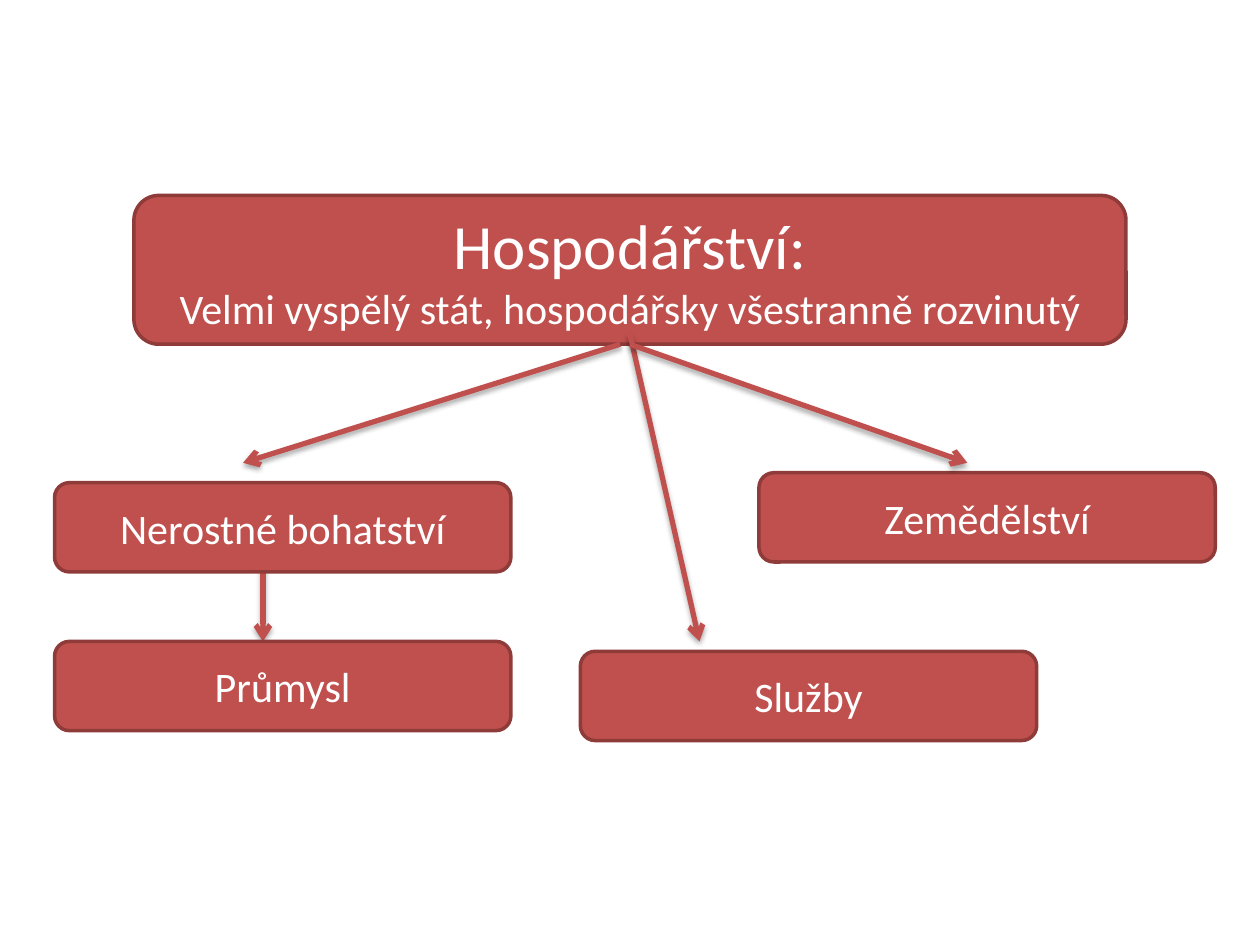
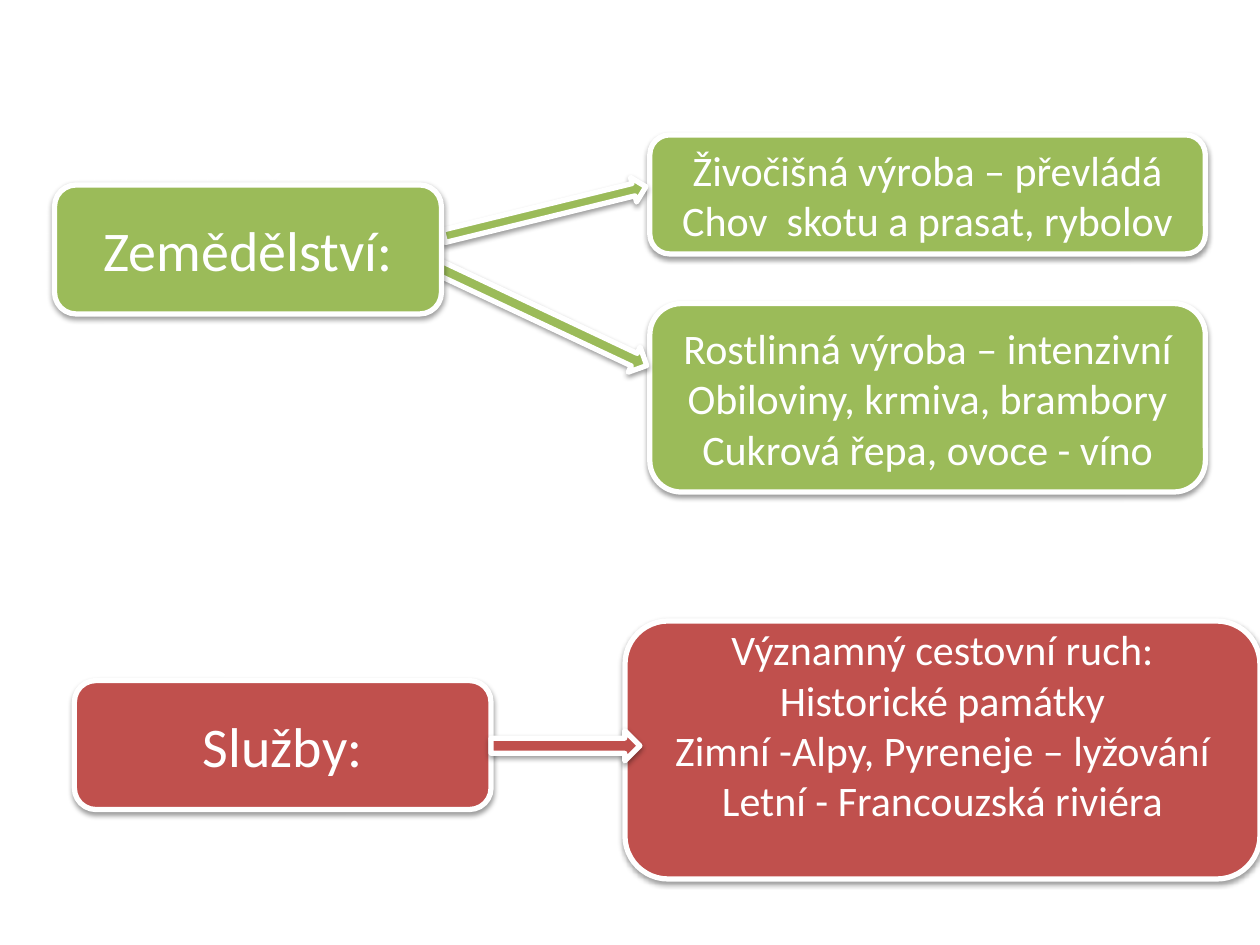
from dataclasses import dataclass

from lxml.etree import SubElement
from pptx import Presentation
from pptx.dml.color import RGBColor as RGB
from pptx.enum.shapes import MSO_CONNECTOR as CONN, MSO_SHAPE as SHAPE
from pptx.enum.text import MSO_ANCHOR as ANCHOR, PP_ALIGN as ALIGN
from pptx.oxml.ns import qn
from pptx.util import Cm, Pt


@dataclass(frozen=True)
class Theme:
    font: str = "Calibri"
    red: RGB = RGB(0xC0, 0x50, 0x4D)
    dark_red: RGB = RGB(0x8E, 0x3B, 0x39)
    green: RGB = RGB(0x9B, 0xBB, 0x59)
    white: RGB = RGB(0xFF, 0xFF, 0xFF)
    title: int = 36
    label: int = 32
    body: int = 24
    thin: int = 2
    thick: int = 3


T = Theme()


def add_shadow(effects, distance, opacity):
    """Put a soft shadow below the shape that owns the effect list."""
    shadow = SubElement(effects, qn("a:outerShdw"), blurRad=str(Pt(3.1)),
                        dist=str(Pt(distance)), dir="5400000", rotWithShape="0")
    color = SubElement(shadow, qn("a:srgbClr"), val="000000")
    SubElement(color, qn("a:alpha"), val=str(opacity * 1000))


def add_block(slide, kind, box, fill, line, width, raised):
    sp = slide.shapes.add_shape(kind, *map(Cm, box))
    sp.fill.solid()
    sp.fill.fore_color.rgb = fill
    sp.line.color.rgb = line
    sp.line.width = Pt(width)
    sp.shadow.inherit = False
    if raised:
        add_shadow(sp.element.spPr.find(qn("a:effectLst")), 1.6, 38)
    return sp


def add_text(sp, lines, sizes):
    tf = sp.text_frame
    tf.word_wrap = True
    tf.vertical_anchor = ANCHOR.MIDDLE
    tf.text = "\n".join(lines)
    for p, size in zip(tf.paragraphs, sizes):
        p.alignment = ALIGN.CENTER
        p.font.name = T.font
        p.font.size = Pt(size)
        p.font.color.rgb = T.white


def flat_box(slide, box, lines, sizes=(T.body,)):
    sp = add_block(slide, SHAPE.ROUNDED_RECTANGLE, box, T.red, T.dark_red, T.thin, False)
    add_text(sp, lines, sizes)
    return sp


def raised_box(slide, box, fill, lines, size=T.body):
    sp = add_block(slide, SHAPE.ROUNDED_RECTANGLE, box, fill, T.white, T.thick, True)
    add_text(sp, lines, [size] * len(lines))
    return sp


def block_arrow(slide, box, fill, rotation=0):
    sp = add_block(slide, SHAPE.RIGHT_ARROW, box, fill, T.white, T.thick, True)
    sp.rotation = rotation


def line_arrow(slide, x1, y1, x2, y2):
    line = slide.shapes.add_connector(CONN.STRAIGHT, Cm(x1), Cm(y1), Cm(x2), Cm(y2))
    line.line.color.rgb = T.red
    line.line.width = Pt(T.thick)
    sp_pr = line.element.spPr
    SubElement(sp_pr.find(qn("a:ln")), qn("a:tailEnd"), type="arrow")
    add_shadow(SubElement(sp_pr, qn("a:effectLst")), 1.8, 35)
    return line


def economy_map(slide, left, top):
    """Heading with arrows to the branches of the economy."""
    def branch(x, y, name):
        flat_box(slide, (left + x, top + y, 9.2, 1.8), [name])

    def arrow(x1, y1, x2, y2):
        return line_arrow(slide, left + x1, top + y1, left + x2, top + y2)

    heading = flat_box(
        slide, (left + 1.6, top, 20, 3),
        ["Hospodářství:", "Velmi vyspělý stát, hospodářsky všestranně rozvinutý"],
        (T.title, T.body))
    branch(14.2, 5.59, "Zemědělství")
    branch(10.6, 9.19, "Služby")

    # Arrows
    arrow(11.4, 3, 3.8, 5.39)
    arrow(11.6, 2.8, 13, 8.99)
    arrow(4.2, 7.39, 4.2, 8.99)
    arrow(11.6, 3, 18.4, 5.39).begin_connect(heading, 2)

    # Left column lies over its arrow
    branch(0, 8.99, "Průmysl")
    branch(0, 5.79, "Nerostné bohatství")


def farming(slide, left, top):
    """Green label with two arrows to the kinds of farming."""
    raised_box(slide, (left + 12, top, 11.2, 2.4), T.green,
               ["Živočišná výroba – převládá", "Chov  skotu a prasat, rybolov"])
    raised_box(slide, (left + 12, top + 3.4, 11.2, 3.8), T.green,
               ["Rostlinná výroba – intenzivní", "Obiloviny, krmiva, brambory",
                "Cukrová řepa, ovoce - víno"])
    block_arrow(slide, (left + 7.79, top + 1.29, 4.19, 0.51), T.green, -13.8)
    block_arrow(slide, (left + 7.51, top + 3.38, 4.65, 0.56), T.green, 25.2)
    raised_box(slide, (left, top + 1.01, 7.8, 2.6), T.green, ["Zemědělství:"], T.label)


def services(slide, left, top):
    """Red label with one arrow to the tourism box."""
    raised_box(slide, (left, top + 1.2, 8.4, 2.6), T.red, ["Služby:"], T.label)
    tourism = raised_box(
        slide, (left + 11.1, top, 12.8, 5.2), T.red,
        ["Významný cestovní ruch:", "Historické památky",
         "Zimní -Alpy, Pyreneje – lyžování", "Letní - Francouzská riviéra"])
    tourism.text_frame.margin_bottom = Cm(1.15)
    block_arrow(slide, (left + 8.4, top + 2.21, 3, 0.61), T.red)


def main():
    prs = Presentation()
    prs.slide_width, prs.slide_height = Cm(25.4), Cm(19.05)
    blank = prs.slide_layouts[6]

    # Slide 1: overview
    economy_map(prs.slides.add_slide(blank), 1.1, 3.94)

    # Slide 2: farming and services
    slide = prs.slides.add_slide(blank)
    farming(slide, 1.1, 2.72)
    services(slide, 1.5, 12.52)

    prs.save("out.pptx")


if __name__ == "__main__":
    main()
